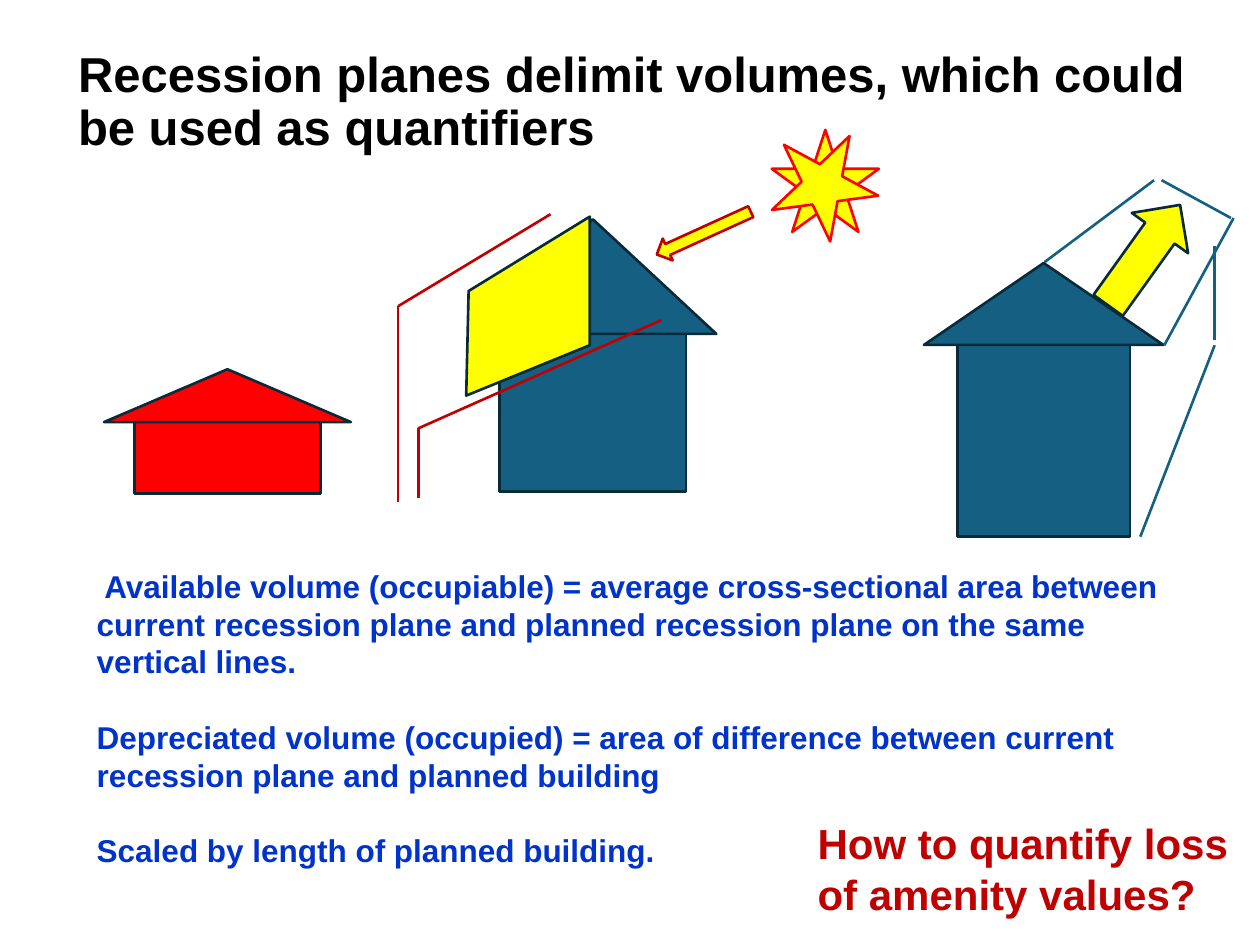
import dataclasses

import pptx
import pptx.dml.color
import pptx.enum.shapes
import pptx.enum.text
import pptx.oxml.ns
import pptx.util
from lxml import etree

Pt = pptx.util.Pt
MSO = pptx.enum.shapes.MSO_SHAPE


@dataclasses.dataclass(frozen=True)
class Theme:
    font: str = "Arial"
    black: str = "000000"
    teal: str = "156082"
    outline: str = "092A39"
    red: str = "FF0000"
    dark_red: str = "C00000"
    yellow: str = "FFFF00"
    blue: str = "0033CC"
    title_size: float = 28
    body_size: float = 18
    question_size: float = 24
    line_width: float = 1.5


THEME = Theme()

TITLE = "Recession planes delimit volumes, which could be used as quantifiers"
DEFINITIONS = [
    " Available volume (occupiable) = average cross-sectional area between "
    "current recession plane and planned recession plane on the same vertical lines.",
    "Depreciated volume (occupied) = area of difference between current "
    "recession plane and planned building",
    "Scaled by length of planned building.",
]
QUESTION = "How to quantify loss of amenity values?"

SHADE_LINES = [
    (651.6, 306.7, 694.1, 197.3),
    (694.1, 140.4, 694.1, 194.4),
    (665.3, 197.3, 704.9, 124.6),
    (596.9, 149.8, 659.5, 103),
    (663.8, 103, 703.4, 124.6),
]
RECESSION_LINES = [
    (239, 244.8, 378, 182.9),
    (227.5, 175, 314.6, 122.4),
    (227.5, 175, 227.5, 286.6),
    (239, 284.4, 239, 244.8),
]
ROOF_FACE = [(266.4, 226.1), (267.8, 166.3), (337, 123.8), (337, 197.3)]


def rgb(color):
    return pptx.dml.color.RGBColor.from_string(color)


def write_text(sp, paragraphs, *, size, color, gap=0, before=0, spacing=None):
    tf = sp.text_frame
    tf.word_wrap = True
    tf.auto_size = pptx.enum.text.MSO_AUTO_SIZE.NONE
    tf.vertical_anchor = pptx.enum.text.MSO_ANCHOR.TOP
    for i, text in enumerate(paragraphs):
        p = tf.add_paragraph() if i else tf.paragraphs[0]
        p.alignment = pptx.enum.text.PP_ALIGN.LEFT
        p.space_before = Pt(gap if i else before)
        if spacing:
            p.line_spacing = spacing
        r = p.add_run()
        r.text = text
        r.font.name = THEME.font
        r.font.size = Pt(size)
        r.font.bold = True
        r.font.color.rgb = rgb(color)


def add_title(s, text):
    sp = s.shapes.title
    sp.left, sp.top, sp.width, sp.height = Pt(37.4), Pt(25.2), Pt(651.6), Pt(182.2)
    write_text(sp, [text], size=THEME.title_size, color=THEME.black,
               before=10, spacing=0.9)


def add_text(s, box, paragraphs, **style):
    sp = s.shapes.add_textbox(*map(Pt, box))
    write_text(sp, paragraphs, **style)


def paint(sp, fill, line):
    sp.shadow.inherit = False
    sp.fill.solid()
    sp.fill.fore_color.rgb = rgb(fill)
    sp.line.color.rgb = rgb(line)
    sp.line.width = Pt(THEME.line_width)


def add_shape(s, kind, box, fill, line=THEME.outline, rotation=0):
    sp = s.shapes.add_shape(kind, *map(Pt, box))
    sp.rotation = rotation
    paint(sp, fill, line)
    return sp


def add_house(s, center, eaves, wall, roof, fill):
    wall_w, wall_h = wall
    roof_w, roof_h = roof
    add_shape(s, MSO.RECTANGLE, (center - wall_w / 2, eaves, wall_w, wall_h), fill)
    add_shape(s, MSO.ISOSCELES_TRIANGLE,
              (center - roof_w / 2, eaves - roof_h, roof_w, roof_h), fill)


def add_lines(s, lines, color):
    for ends in lines:
        sp = s.shapes.add_connector(
            pptx.enum.shapes.MSO_CONNECTOR.STRAIGHT, *map(Pt, ends))
        sp.line.color.rgb = rgb(color)
        sp.line.width = Pt(THEME.line_width)
        etree.SubElement(sp._element.spPr, pptx.oxml.ns.qn("a:effectLst"))


def add_polygon(s, points, fill, line=THEME.outline):
    start, *rest = [(Pt(x), Pt(y)) for x, y in points]
    builder = s.shapes.build_freeform(*start)
    builder.add_line_segments(rest, close=True)
    paint(builder.convert_to_shape(), fill, line)


def main():
    prs = pptx.Presentation()
    prs.slide_width, prs.slide_height = Pt(720), Pt(540)
    s = prs.slides.add_slide(prs.slide_layouts[5])
    add_title(s, TITLE)

    add_house(s, 596.4, 197.1, (98.6, 109.4), (136.8, 46.8), THEME.teal)
    add_lines(s, SHADE_LINES, THEME.teal)
    shade_arrow = add_shape(s, MSO.RIGHT_ARROW, (618.5, 126, 70.6, 39.6),
                            THEME.yellow, rotation=305.6)
    shade_arrow.adjustments[0] = 0.52

    add_text(s, (48.2, 320.4, 641.5, 203.8), DEFINITIONS,
             size=THEME.body_size, color=THEME.blue, gap=21.6)

    add_house(s, 338.8, 190.8, (106.6, 90), (141.1, 65.5), THEME.teal)
    add_lines(s, RECESSION_LINES, THEME.dark_red)
    add_house(s, 130, 241.2, (106.6, 41), (141.1, 30.2), THEME.red)

    for rotation in (0, 28.4):
        add_shape(s, MSO.STAR_5_POINT, (441, 74.2, 61.2, 58.3),
                  THEME.yellow, THEME.red, rotation)
    add_shape(s, MSO.DOWN_ARROW, (395.3, 103.7, 13.7, 59),
              THEME.yellow, THEME.dark_red, 65.5)
    add_polygon(s, ROOF_FACE, THEME.yellow)

    add_text(s, (460.1, 463.7, 259.9, 65.5), [QUESTION],
             size=THEME.question_size, color=THEME.dark_red)
    prs.save("out.pptx")


if __name__ == "__main__":
    main()
